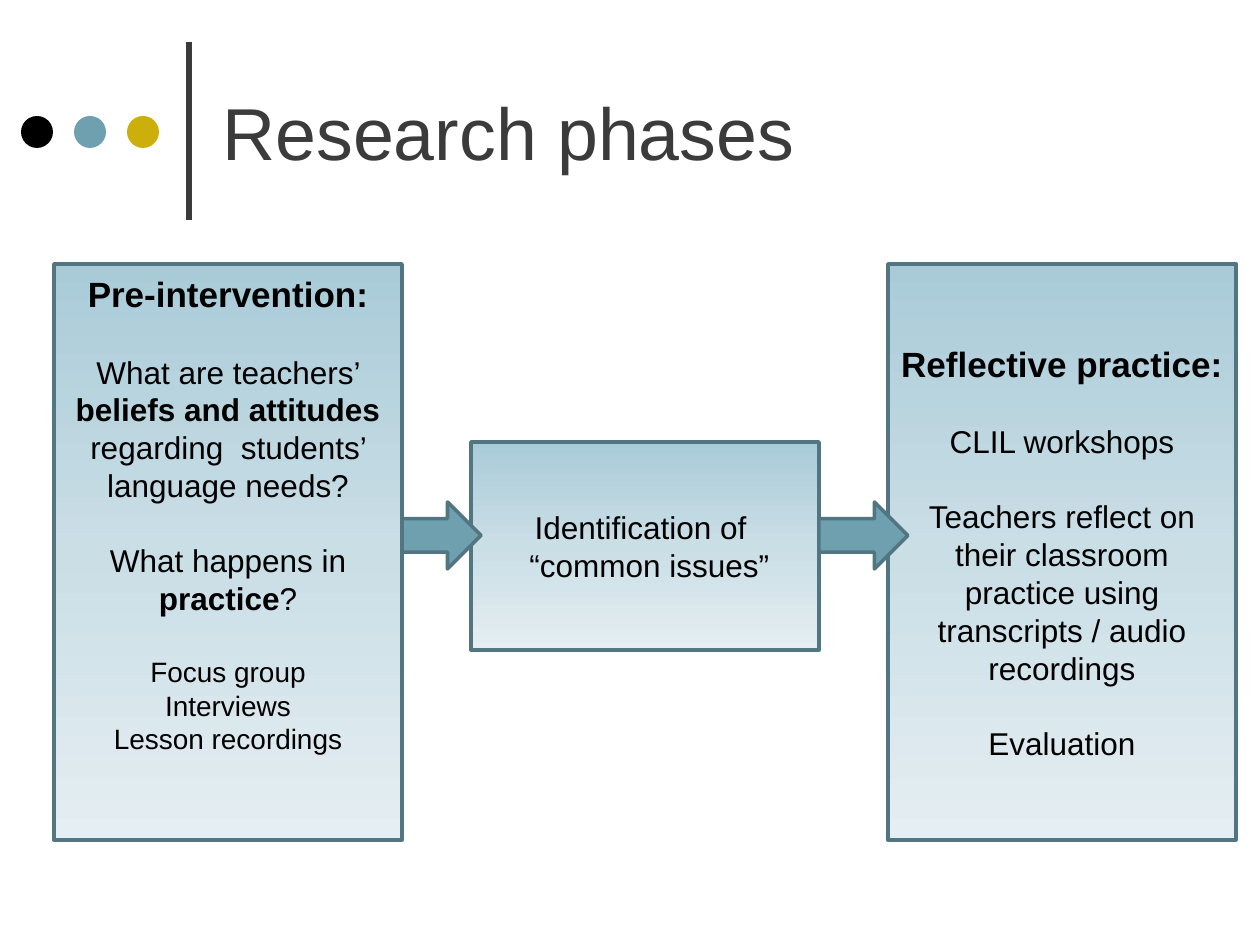
import copy

import pptx
import pptx.dml.color
import pptx.enum.shapes
import pptx.enum.text
import pptx.oxml.ns
import pptx.util

PX = 914400 // 126
SHAPE = pptx.enum.shapes.MSO_SHAPE
ALIGN = pptx.enum.text.PP_ALIGN
COLORS = {
    "ink": "000000", "title": "3B3B3B", "teal": "6EA0B0", "gold": "CCAF0A",
    "edge": "517682", "top": "A9CBD8", "middle": "CADEE6", "bottom": "E5EEF2",
}
BLANK_LINE = 21.5  # points of space between text groups

# Paragraphs: size, space before, then (text, bold) spans
PRE_INTERVENTION = [
    (20, 0, [("Pre-intervention:", True)]),
    (18, BLANK_LINE, [("What are teachers’ ", False),
                      ("beliefs and attitudes ", True),
                      ("regarding  students’ language needs?", False)]),
    (18, BLANK_LINE, [("What happens in ", False), ("practice", True),
                      ("?", False)]),
    (16, BLANK_LINE, [("Focus group", False)]),
    (16, 0, [("Interviews", False)]),
    (16, 0, [("Lesson recordings", False)]),
]
IDENTIFICATION = [
    (18, 0, [("Identification of \n “common issues”", False)]),
]
REFLECTIVE_PRACTICE = [
    (20, 0, [("Reflective practice:", True)]),
    (18, BLANK_LINE, [("CLIL workshops", False)]),
    (18, BLANK_LINE, [("Teachers reflect on their classroom practice using "
                       "transcripts / audio recordings", False)]),
    (18, BLANK_LINE, [("Evaluation", False)]),
]


def px(*lengths):
    return [pptx.util.Emu(length * PX) for length in lengths]


def rgb(name):
    return pptx.dml.color.RGBColor.from_string(COLORS[name])


def set_all(target, values):
    for name, value in values.items():
        setattr(target, name, value)


def add_shape(page, kind, place, fill=None, edge=None):
    shape = page.shapes.add_shape(kind, *px(*place))
    shape.shadow.inherit = False
    if fill:
        shape.fill.solid()
        shape.fill.fore_color.rgb = rgb(fill)
    if edge:
        shape.line.color.rgb = rgb(edge)
        shape.line.width = pptx.util.Pt(2)
    else:
        shape.line.fill.background()
    return shape


def fill_gradient(shape):
    shape.fill.gradient()
    shape.fill.gradient_angle = 270
    stop_list = shape.element.spPr.find(".//" + pptx.oxml.ns.qn("a:gsLst"))
    stop_list.insert(1, copy.deepcopy(stop_list[0]))
    for stop, position, name in zip(shape.fill.gradient_stops, (0, 0.5, 1),
                                    ("top", "middle", "bottom")):
        stop.position = position
        stop.color.rgb = rgb(name)


def write_text(shape, paragraphs, color, align, bottom_px=6):
    frame = shape.text_frame
    set_all(frame, {
        "word_wrap": True,
        "vertical_anchor": pptx.enum.text.MSO_ANCHOR.MIDDLE,
        "margin_bottom": px(bottom_px)[0],
    })
    for index, (size, before, spans) in enumerate(paragraphs):
        para = frame.add_paragraph() if index else frame.paragraphs[0]
        set_all(para, {"alignment": align,
                       "space_before": pptx.util.Pt(before)})
        for text, bold in spans:
            for number, line in enumerate(text.split("\n")):
                if number:
                    para.add_line_break()
                span = para.add_run()
                span.text = line
                set_all(span.font, {"name": "Arial", "bold": bold,
                                    "size": pptx.util.Pt(size)})
                span.font.color.rgb = rgb(color)


def add_phase(page, place, paragraphs, bottom_px=6):
    box = add_shape(page, SHAPE.RECTANGLE, place, edge="edge")
    fill_gradient(box)
    write_text(box, paragraphs, "ink", ALIGN.CENTER, bottom_px)


def add_rule(page, start, end):
    rule = page.shapes.add_connector(
        pptx.enum.shapes.MSO_CONNECTOR.STRAIGHT, *px(*start, *end))
    rule.line.color.rgb = rgb("title")
    rule.line.width = pptx.util.Pt(3)
    effects = pptx.oxml.ns.qn("a:effectLst")
    rule.element.spPr.append(rule.element.makeelement(effects, {}))


def add_title(page, place, text):
    box = page.shapes.add_textbox(*px(*place))
    write_text(box, [(42, 0, [(text, False)])], "title", ALIGN.LEFT)


def main():
    deck = pptx.Presentation()
    deck.slide_width, deck.slide_height = px(1260, 945)
    page = deck.slides.add_slide(deck.slide_layouts[6])

    # Header: rule, dots and title
    add_rule(page, (189, 220), (189, 42))
    for index, color in enumerate(("ink", "teal", "gold")):
        add_shape(page, SHAPE.OVAL, (21 + 53 * index, 116, 32, 32), color)
    add_title(page, (210, 26, 966, 210), "Research phases")

    # Phases, evenly spaced from left to right
    left, step, width = 54, 417, 348
    add_phase(page, (left, 264, width, 576), PRE_INTERVENTION, bottom_px=82)
    add_phase(page, (left + step, 442, width, 208), IDENTIFICATION)
    add_phase(page, (left + 2 * step, 264, width, 576), REFLECTIVE_PRACTICE)

    # Arrows start at the right edge of each phase
    for index, length in enumerate((79, 89)):
        place = (left + width + step * index, 502, length, 67)
        add_shape(page, SHAPE.RIGHT_ARROW, place, "teal", "edge")

    deck.save("out.pptx")


if __name__ == "__main__":
    main()
